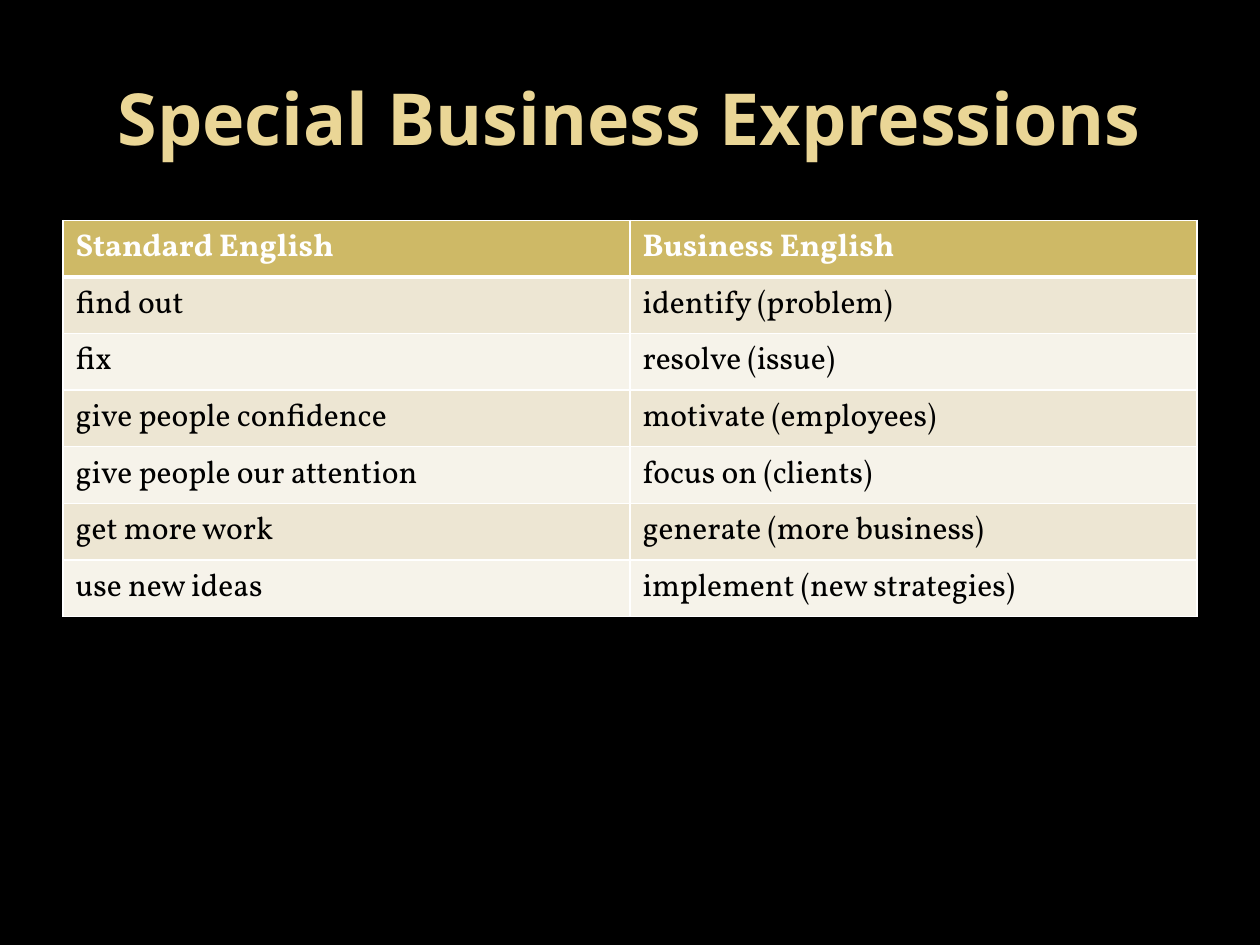
from dataclasses import dataclass

from lxml import etree
from pptx import Presentation
from pptx.dml.color import RGBColor
from pptx.enum.text import MSO_ANCHOR, MSO_AUTO_SIZE, PP_ALIGN
from pptx.oxml.ns import qn
from pptx.util import Inches, Pt

CENTER = PP_ALIGN.CENTER
MIDDLE = MSO_ANCHOR.MIDDLE
NO_AUTOFIT = MSO_AUTO_SIZE.NONE
TITLE_ONLY = 5


@dataclass(frozen=True)
class Theme:
    background: str = "000000"
    title: str = "EAD696"
    header: str = "CEB966"
    bands: tuple = ("EDE6D3", "F6F3EA")
    header_text: str = "FFFFFF"
    body_text: str = "000000"
    border: str = "FFFFFF"
    title_font: str = "Open Sans"
    body_font: str = "Vollkorn"
    title_size: int = 41
    body_size: int = 18
    thin: int = 1
    thick: int = 3


theme = Theme()


def add_text(para, text, font, size, color, bold):
    span = para.add_run()
    span.text = text
    span.font.name = font
    span.font.size = Pt(size)
    span.font.bold = bold
    span.font.color.rgb = RGBColor.from_string(color)


def add_border(cell, side, width):
    properties = cell._tc.get_or_add_tcPr()
    line = etree.SubElement(properties, qn(f"a:ln{side}"), w=str(Pt(width)))
    fill = etree.SubElement(line, qn("a:solidFill"))
    etree.SubElement(fill, qn("a:srgbClr"), val=theme.border)


deck = Presentation()
deck.slide_width = Inches(10)
deck.slide_height = Inches(7.5)
page = deck.slides.add_slide(deck.slide_layouts[TITLE_ONLY])
page.background.fill.solid()
page.background.fill.fore_color.rgb = RGBColor.from_string(theme.background)

title = page.shapes.title
title.left, title.top = Inches(0.5), Inches(0.3)
title.width, title.height = Inches(9), Inches(1.25)
title.text_frame.auto_size = NO_AUTOFIT
title.text_frame.vertical_anchor = MIDDLE
title_para = title.text_frame.paragraphs[0]
title_para.alignment = CENTER
add_text(title_para, "Special Business Expressions",
         theme.title_font, theme.title_size, theme.title, True)

expressions = [
    ("Standard English", "Business English"),
    ("find out", "identify (problem)"),
    ("fix", "resolve (issue)"),
    ("give people confidence", "motivate (employees)"),
    ("give people our attention", "focus on (clients)"),
    ("get more work", "generate (more business)"),
    ("use new ideas", "implement (new strategies)"),
]

row_height = Inches(0.41)
table = page.shapes.add_table(
    len(expressions), 2, Inches(0.5), Inches(1.75),
    Inches(9), row_height * len(expressions)).table

for row, entries in enumerate(expressions):
    table.rows[row].height = row_height
    is_header = row == 0
    fill_color = theme.header if is_header else theme.bands[(row - 1) % 2]
    text_color = theme.header_text if is_header else theme.body_text
    widths = {
        "L": theme.thin,
        "R": theme.thin,
        "T": theme.thick if row == 1 else theme.thin,
        "B": theme.thick if is_header else theme.thin,
    }
    for column, text in enumerate(entries):
        cell = table.cell(row, column)
        for side, width in widths.items():
            add_border(cell, side, width)
        cell.fill.solid()
        cell.fill.fore_color.rgb = RGBColor.from_string(fill_color)
        add_text(cell.text_frame.paragraphs[0], text,
                 theme.body_font, theme.body_size, text_color, is_header)

deck.save("out.pptx")
